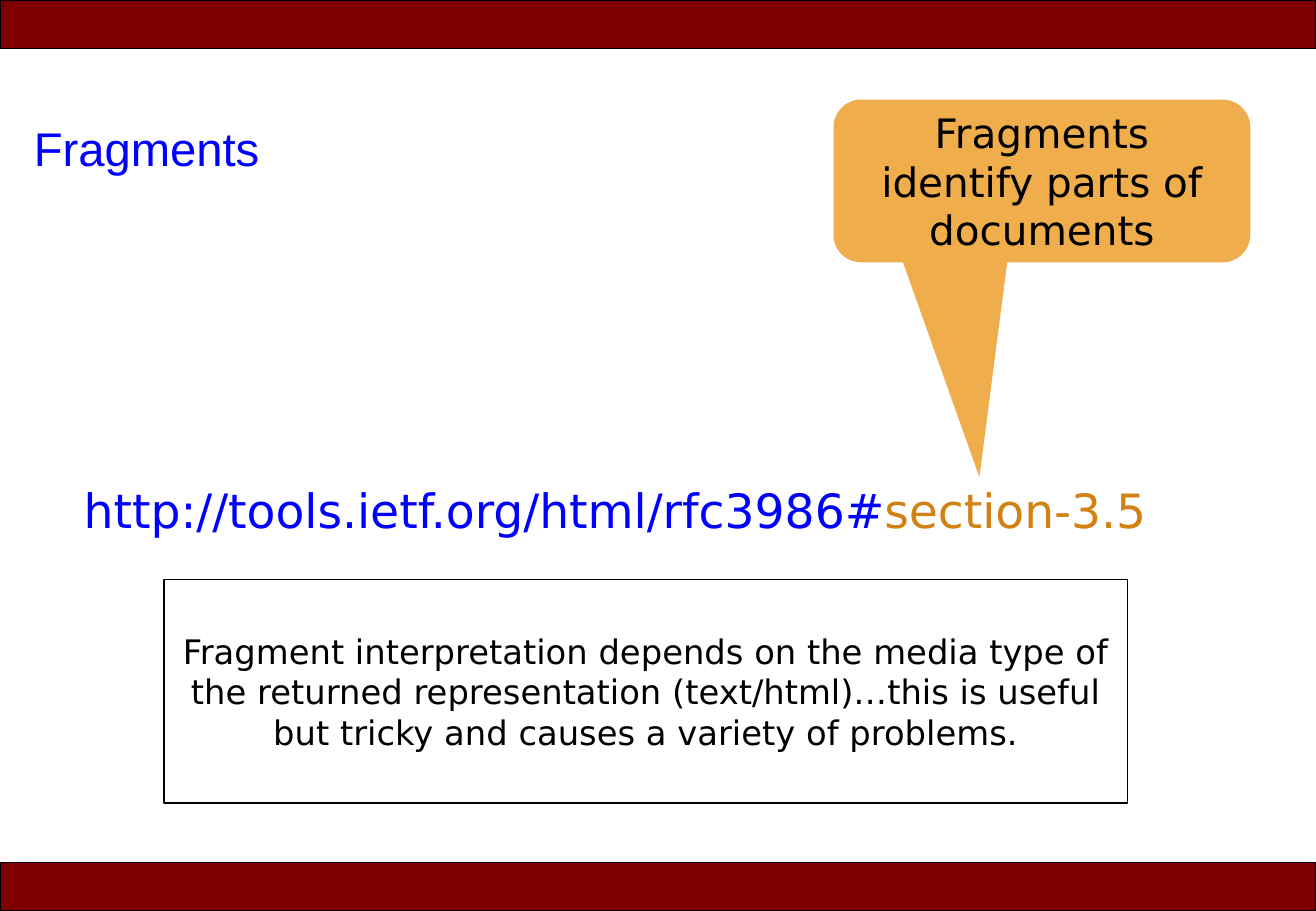
from pptx import Presentation
from pptx import util as u
from pptx.dml.color import RGBColor
from pptx.enum import shapes, text

PX = 9144  # EMU per px, 100 px to the inch
WIDTH, HEIGHT, BAR_HEIGHT = 1083, 750, 40

MAROON = RGBColor(0x80, 0x00, 0x00)
BLUE = RGBColor(0x00, 0x00, 0xFF)
OCHRE = RGBColor(0xD1, 0x82, 0x13)
AMBER = RGBColor(0xEF, 0xAD, 0x4B)
BLACK = RGBColor(0x00, 0x00, 0x00)


def to_emu(box):
    return [u.Emu(length * PX) for length in box]


def add_panel(slide, kind, box, fill=None, line_width=None):
    shape = slide.shapes.add_shape(kind, *to_emu(box))
    shape.shadow.inherit = False
    if fill is None:
        shape.fill.background()
    else:
        shape.fill.solid()
        shape.fill.fore_color.rgb = fill
    if line_width is None:
        shape.line.fill.background()
    else:
        shape.line.color.rgb = BLACK
        shape.line.width = u.Pt(line_width)
    return shape


def write(shape, runs, size, font="DejaVu Sans", align=text.PP_ALIGN.CENTER,
          anchor=text.MSO_ANCHOR.MIDDLE, wrap=True):
    frame = shape.text_frame
    frame.word_wrap = wrap
    frame.vertical_anchor = anchor
    paragraph = frame.paragraphs[0]
    paragraph.alignment = align
    for words, color in runs:
        run = paragraph.add_run()
        run.text = words
        run.font.name = font
        run.font.size = u.Pt(size)
        run.font.color.rgb = color
    return paragraph


def add_bars(slide, box):
    left, top, width, height = box
    for bar_top in (top, top + height - BAR_HEIGHT):
        add_panel(slide, shapes.MSO_SHAPE.RECTANGLE,
                  (left, bar_top, width, BAR_HEIGHT), MAROON, 0.75)


def add_title(slide, box):
    title = slide.shapes.add_textbox(*to_emu(box))
    paragraph = write(title, [("Fragments", BLUE)], 28, "Arial",
                      text.PP_ALIGN.LEFT, text.MSO_ANCHOR.BOTTOM)
    paragraph.line_spacing = 0.9


def add_address(slide, box):
    address = slide.shapes.add_textbox(*to_emu(box))
    write(address, [("http://tools.ietf.org/html/rfc3986#", BLUE),
                    ("section-3.5", OCHRE)], 28,
          align=text.PP_ALIGN.LEFT, anchor=text.MSO_ANCHOR.TOP, wrap=False)


def add_callout(slide, box):
    callout = add_panel(slide, shapes.MSO_SHAPE.ROUNDED_RECTANGULAR_CALLOUT,
                        box, AMBER)
    # Pointer tip (x, y from the centre) and corner radius
    for index, value in enumerate((-0.15, 1.82, 0.17)):
        callout.adjustments[index] = value
    write(callout, [("Fragments identify parts of documents", BLACK)], 24)


def add_note(slide, box):
    note = add_panel(slide, shapes.MSO_SHAPE.RECTANGLE, box, line_width=1)
    write(note, [("Fragment interpretation depends on the media type of the "
                  "returned representation (text/html)…this is useful but "
                  "tricky and causes a variety of problems.", BLACK)], 20)


def main():
    presentation = Presentation()
    presentation.slide_width, presentation.slide_height = to_emu((WIDTH, HEIGHT))
    slide = presentation.slides.add_slide(presentation.slide_layouts[6])
    add_bars(slide, (0, 0, WIDTH, HEIGHT))
    add_title(slide, (18, 95, 977, 55))
    add_address(slide, (59, 391, 925, 57))
    add_callout(slide, (686, 82, 343, 134))
    add_note(slide, (135, 477, 793, 184))
    presentation.save("out.pptx")


if __name__ == "__main__":
    main()
